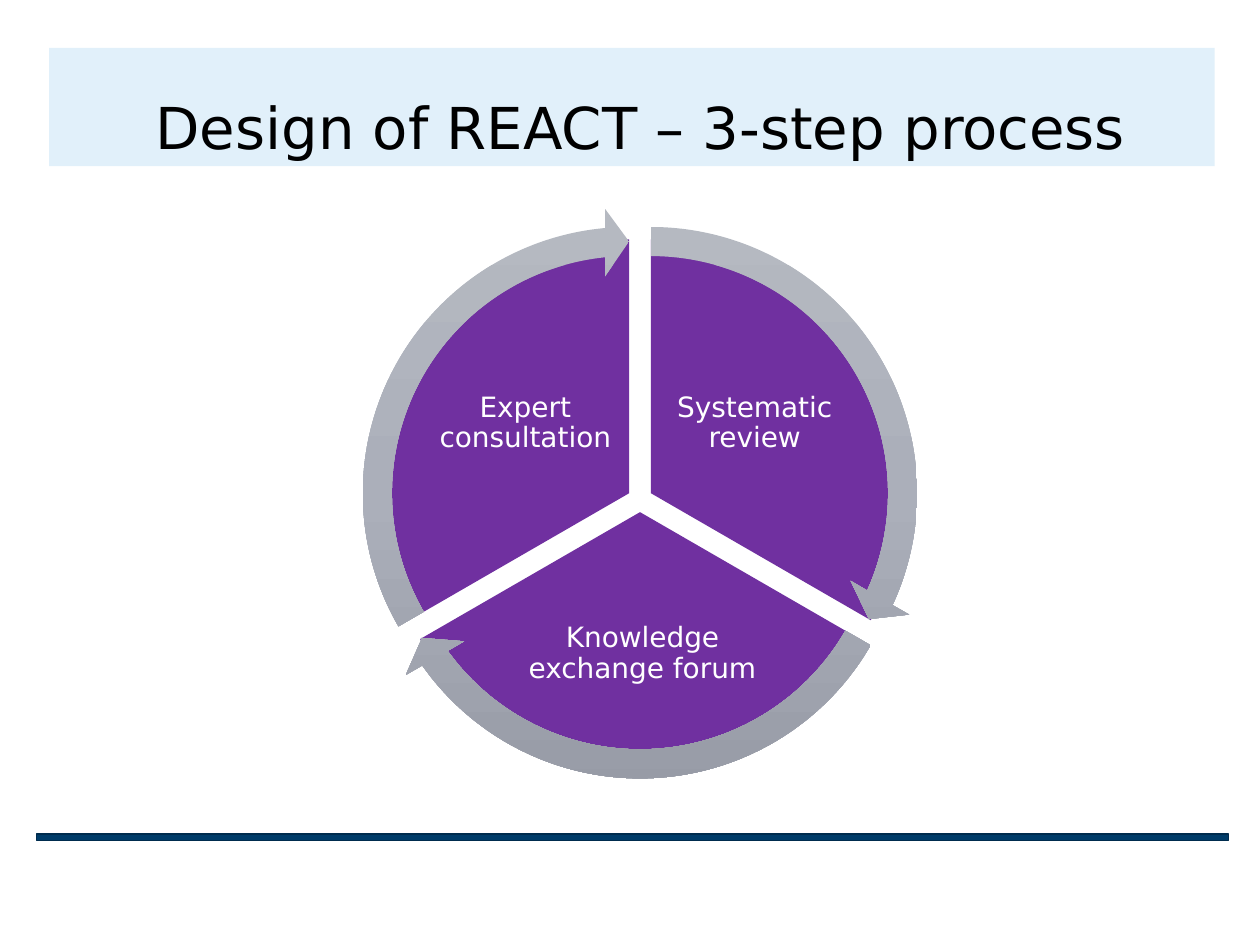
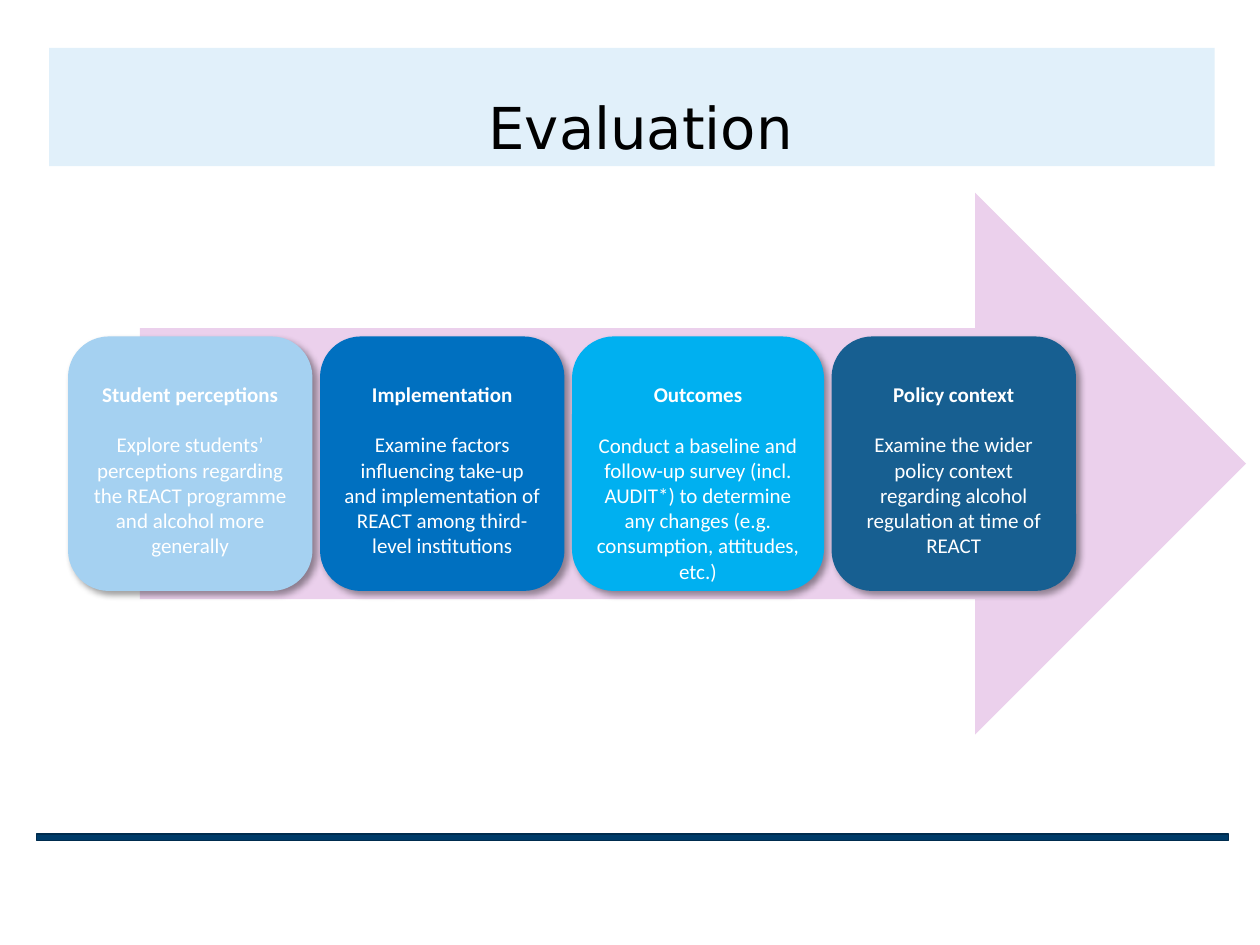
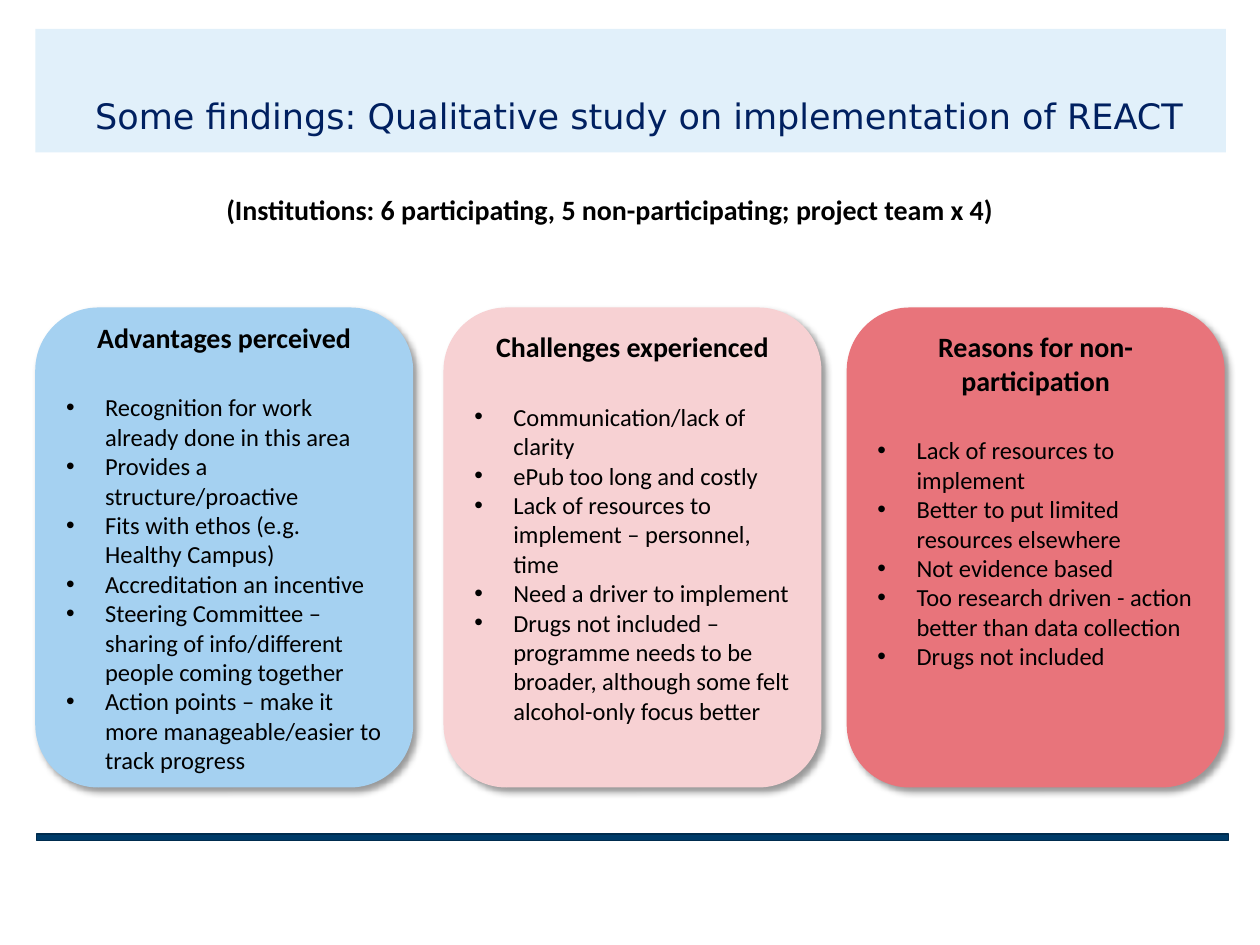
import copy
import math

import lxml.etree
import pptx
import pptx.dml.color
import pptx.enum.shapes
import pptx.enum.text
import pptx.oxml.ns
import pptx.util

RGB = pptx.dml.color.RGBColor
SHAPE = pptx.enum.shapes.MSO_SHAPE
ALIGN = pptx.enum.text.PP_ALIGN
ANCHOR = pptx.enum.text.MSO_ANCHOR
Pt = pptx.util.Pt
qn = pptx.oxml.ns.qn

WIDTH, HEIGHT = pptx.util.Inches(10), pptx.util.Inches(7.5)
COLUMNS, ROWS = 100, 75

BLACK = RGB(0x00, 0x00, 0x00)
WHITE = RGB(0xFF, 0xFF, 0xFF)
NAVY = RGB(0x00, 0x20, 0x60)
RULE_BLUE = RGB(0x00, 0x3C, 0x69)
RULE_EDGE = RGB(0x00, 0x2C, 0x4E)
BAND_BLUE = RGB(0xE1, 0xF0, 0xFA)
PURPLE = RGB(0x70, 0x30, 0xA0)
LILAC = RGB(0xEB, 0xD0, 0xEC)
PALE_BLUE = RGB(0xA5, 0xD1, 0xF1)
MID_BLUE = RGB(0x00, 0x70, 0xC0)
BRIGHT_BLUE = RGB(0x00, 0xB0, 0xF0)
DEEP_BLUE = RGB(0x17, 0x5F, 0x91)
PINK = RGB(0xF7, 0xD1, 0xD3)
RED = RGB(0xE8, 0x74, 0x7B)
GREYS = [RGB(0xB5, 0xB9, 0xC1), RGB(0xAB, 0xAF, 0xBA), RGB(0x97, 0x9B, 0xA6)]

TITLE_FONT = "DejaVu Sans"
BODY_FONT = "Calibri"

STEPS = [
    ("Systematic review", (52.7, 27.6, 14.4, 12)),
    ("Knowledge exchange forum", (40.2, 46.6, 21.6, 10.6)),
    ("Expert consultation", (34.5, 27.6, 14.4, 12)),
]

STRANDS = [
    ("Student perceptions", PALE_BLUE, 19.4,
     "Explore students’ perceptions regarding the REACT programme and alcohol more generally"),
    ("Implementation", MID_BLUE, 19.4,
     "Examine factors influencing take-up and implementation of REACT among third-level institutions"),
    ("Outcomes", BRIGHT_BLUE, 20,
     "Conduct a baseline and follow-up survey (incl. AUDIT*) to determine any changes "
     "(e.g. consumption, attitudes, etc.)"),
    ("Policy context", DEEP_BLUE, 19.4,
     "Examine the wider policy context regarding alcohol regulation at time of REACT"),
]

FINDINGS = [
    ("Advantages perceived", PALE_BLUE, 2.8, ANCHOR.MIDDLE, [
        "Recognition for work already done in this area",
        "Provides a structure/proactive",
        "Fits with ethos (e.g. Healthy Campus)",
        "Accreditation an incentive",
        "Steering Committee – sharing of info/different people coming together",
        "Action points – make it more manageable/easier to track progress",
    ]),
    ("Challenges experienced", PINK, 35.2, ANCHOR.TOP, [
        "Communication/lack of clarity",
        "ePub too long and costly",
        "Lack of resources to implement – personnel, time",
        "Need a driver to implement",
        "Drugs not included – programme needs to be broader, although some felt "
        "alcohol-only focus better",
    ]),
    ("Reasons for non-participation", RED, 67.2, ANCHOR.TOP, [
        "Lack of resources to implement",
        "Better to put limited resources elsewhere",
        "Not evidence based",
        "Too research driven - action better than data collection",
        "Drugs not included",
    ]),
]


def across(columns):
    return round(WIDTH * columns / COLUMNS)


def down(rows):
    return round(HEIGHT * rows / ROWS)


def place(cell):
    left, top, width, height = cell
    return across(left), down(top), across(width), down(height)


def add_figure(slide, preset, cell, fill=None):
    figure = slide.shapes.add_shape(preset, *place(cell))
    figure.shadow.inherit = False
    figure.line.fill.background()
    if fill is not None:
        figure.fill.solid()
        figure.fill.fore_color.rgb = fill
    return figure


def set_frame(frame, anchor, left=1, top=0.5, right=1, bottom=0.5):
    frame.word_wrap = True
    frame.vertical_anchor = anchor
    frame.margin_left, frame.margin_right = across(left), across(right)
    frame.margin_top, frame.margin_bottom = down(top), down(bottom)


def write(paragraph, text, font, size, color, bold=False):
    run = paragraph.add_run()
    run.text = text
    run.font.name = font
    run.font.size = Pt(size)
    run.font.color.rgb = color
    run.font.bold = bold


def add_label(slide, cell, text, font, size, color, anchor, inset, bold=False, spacing=1.0):
    frame = slide.shapes.add_textbox(*place(cell)).text_frame
    set_frame(frame, anchor, *inset)
    paragraph = frame.paragraphs[0]
    paragraph.alignment = ALIGN.CENTER
    paragraph.line_spacing = spacing
    write(paragraph, text, font, size, color, bold)


def add_bullet(paragraph):
    properties = paragraph._p.get_or_add_pPr()
    properties.set("marL", str(across(3.1)))
    properties.set("indent", str(-across(3.1)))
    lxml.etree.SubElement(properties, qn("a:buFont")).set("typeface", "Arial")
    lxml.etree.SubElement(properties, qn("a:buChar")).set("char", "•")


def add_soft_shadow(figure):
    effects = figure._element.spPr.find(qn("a:effectLst"))
    shadow = lxml.etree.SubElement(effects, qn("a:outerShdw"), blurRad=str(Pt(4)),
                                   dist=str(Pt(3)), dir="2700000", rotWithShape="0")
    tint = lxml.etree.SubElement(shadow, qn("a:srgbClr"), val=str(BLACK))
    lxml.etree.SubElement(tint, qn("a:alpha"), val="40000")


def add_card(slide, cell, fill, heading, heading_size, color, anchor, top):
    card = add_figure(slide, SHAPE.ROUNDED_RECTANGLE, cell, fill)
    add_soft_shadow(card)
    set_frame(card.text_frame, anchor, top=top, bottom=0)
    title = card.text_frame.paragraphs[0]
    title.alignment = ALIGN.CENTER
    write(title, heading, BODY_FONT, heading_size, color, True)
    return card.text_frame


def fill_with_greys(figure):
    figure.fill.gradient()
    figure.fill.gradient_angle = 270
    stop_list = figure._element.spPr.find(".//" + qn("a:gsLst"))
    stop_list.insert(1, copy.deepcopy(stop_list[0]))
    for index, (stop, grey) in enumerate(zip(figure.fill.gradient_stops, GREYS)):
        stop.position = index / 2
        stop.color.rgb = grey


def add_wheel(slide, center_x, center_y, pie_size, arrow_size, gap):
    sectors = []
    for index, (step, label_cell) in enumerate(STEPS):
        start = (270 + 120 * index) % 360
        end = (start + 120) % 360
        middle = math.radians(start + 60)
        x, y = center_x + gap * math.cos(middle), center_y + gap * math.sin(middle)
        sectors.append((start, end, x, y))
        pie = add_figure(slide, SHAPE.PIE, (x - pie_size / 2, y - pie_size / 2, pie_size, pie_size), PURPLE)
        pie.adjustments[0], pie.adjustments[1] = start * 0.6, end * 0.6
        add_label(slide, label_cell, step, TITLE_FONT, 16, WHITE, ANCHOR.MIDDLE,
                  (0.2, 0.2, 0.2, 0.2), spacing=0.9)
    for start, end, x, y in sectors:
        arrow = add_figure(slide, SHAPE.CIRCULAR_ARROW,
                           (x - arrow_size / 2, y - arrow_size / 2, arrow_size, arrow_size))
        fill_with_greys(arrow)
        head = 3.275
        for index, value in enumerate((0.051, head, end * 0.6 - head, start * 0.6, 0.059)):
            arrow.adjustments[index] = value


def start_slide(deck, title, band=(3.9, 3.8, 92.5, 9.4), size=33, color=BLACK, bottom=0.45):
    slide = deck.slides.add_slide(deck.slide_layouts[6])
    rule = add_figure(slide, SHAPE.RECTANGLE, (2.9, 66.2, 94.6, 0.5), RULE_BLUE)
    rule.line.color.rgb = RULE_EDGE
    rule.line.width = Pt(1)
    frame = add_figure(slide, SHAPE.RECTANGLE, band, BAND_BLUE).text_frame
    set_frame(frame, ANCHOR.BOTTOM, left=2.4, bottom=bottom)
    frame.paragraphs[0].alignment = ALIGN.CENTER
    write(frame.paragraphs[0], title, TITLE_FONT, size, color)
    return slide


def build_design(deck):
    slide = start_slide(deck, "Design of REACT – 3-step process")
    add_wheel(slide, 50.8, 39.65, 40.3, 45.3, 1)


def build_evaluation(deck):
    slide = start_slide(deck, "Evaluation")
    add_figure(slide, SHAPE.RIGHT_ARROW, (11.1, 15.3, 87.8, 43), LILAC)
    left = 5.4
    for heading, fill, width, aim in STRANDS:
        frame = add_card(slide, (left, 26.7, width, 20.2), fill, heading, 12, WHITE, ANCHOR.TOP, 2.6)
        body = frame.add_paragraph()
        body.alignment = ALIGN.CENTER
        body.space_before = Pt(14.6)
        write(body, aim, BODY_FONT, 12, WHITE)
        left += width + 0.6


def build_findings(deck):
    slide = start_slide(deck, "Some findings: Qualitative study on implementation of REACT",
                        (2.8, 2.3, 94.5, 9.8), 20, NAVY, 1.3)
    add_label(slide, (4.9, 15.3, 87, 3.2),
              "(Institutions: 6 participating, 5 non-participating; project team x 4)",
              BODY_FONT, 16, BLACK, ANCHOR.TOP, (1, 0.5, 1, 0.5), True, 0.8)
    for heading, fill, left, anchor, points in FINDINGS:
        top = 0.3 if anchor == ANCHOR.TOP else 0
        frame = add_card(slide, (left, 24.4, 30, 38.1), fill, heading, 16, BLACK, anchor, top)
        for index, point in enumerate(points):
            item = frame.add_paragraph()
            item.alignment = ALIGN.LEFT
            item.space_before = Pt(0 if index else 22)
            add_bullet(item)
            write(item, point, BODY_FONT, 14, BLACK)


def main():
    deck = pptx.Presentation()
    deck.slide_width, deck.slide_height = WIDTH, HEIGHT
    build_design(deck)
    build_evaluation(deck)
    build_findings(deck)
    deck.save("out.pptx")


if __name__ == "__main__":
    main()
